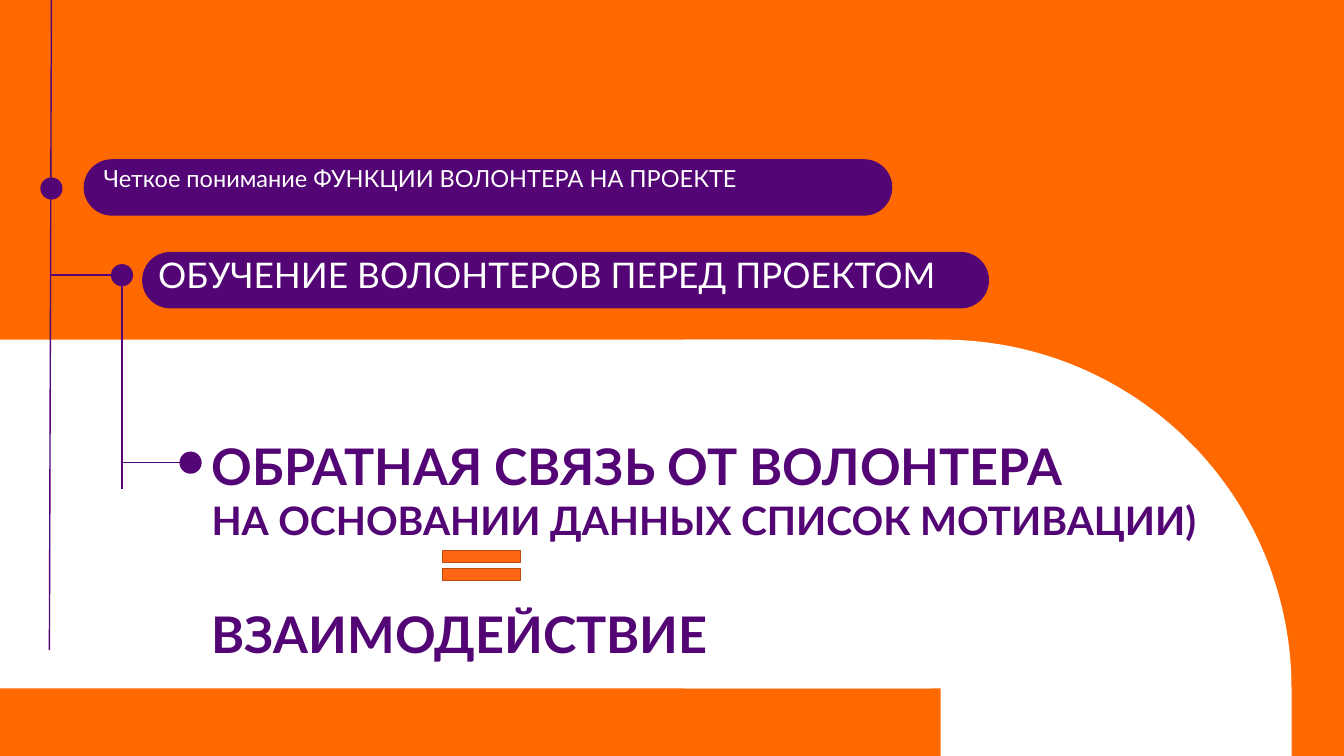
from dataclasses import dataclass
from math import cos, pi, sin

from lxml.etree import SubElement
from pptx import Presentation
from pptx.dml.color import RGBColor
from pptx.enum.shapes import MSO_CONNECTOR, MSO_SHAPE as Preset
from pptx.oxml.ns import qn
from pptx.util import Inches, Pt

ORANGE, PURPLE, WHITE = "FF6900", "540575", "FFFFFF"
EQUAL_FILL, EQUAL_LINE = "FF6614", "BD4B0F"
DOT_SIZE = 0.22


@dataclass
class Block:
    preset: Preset
    left: float
    top: float
    width: float
    height: float
    fill: str
    rounding: float | None = None
    outline: str | None = None


@dataclass
class Line:
    text: str
    size: float
    color: str
    bold: bool = False
    spacing: float = 1.0
    space_before: float = 0


@dataclass
class TextBox:
    left: float
    top: float
    width: float
    height: float
    lines: list[Line]


@dataclass
class Link:
    x1: float
    y1: float
    x2: float
    y2: float


def color(value: str) -> RGBColor:
    return RGBColor.from_string(value)


def paint(shape, fill: str, outline: str | None = None) -> None:
    shape.shadow.inherit = False
    shape.fill.solid()
    shape.fill.fore_color.rgb = color(fill)
    if outline:
        shape.line.color.rgb = color(outline)
        shape.line.width = Pt(1)
    else:
        shape.line.fill.background()


def draw_block(slide, block: Block) -> None:
    shape = slide.shapes.add_shape(
        block.preset, Inches(block.left), Inches(block.top),
        Inches(block.width), Inches(block.height))
    if block.rounding is not None:
        shape.adjustments[0] = block.rounding
    paint(shape, block.fill, block.outline)


def draw_curved_panel(slide) -> None:
    left, right, top, base, bottom = 6.78, 12.81, 3.37, 6.83, 7.5
    radius = base - top
    center_x = right - radius
    steps = 90
    angles = [pi / 2 * step / steps for step in range(steps + 1)]
    arc = [(center_x + radius * cos(a), base - radius * sin(a)) for a in angles]
    points = [(left, base), (9.33, base), (9.33, bottom), (right, bottom), *arc]
    builder = slide.shapes.build_freeform(Inches(left), Inches(top))
    builder.add_line_segments([(Inches(x), Inches(y)) for x, y in points], close=True)
    paint(builder.convert_to_shape(), WHITE)


def draw_text(slide, box: TextBox) -> None:
    shape = slide.shapes.add_textbox(
        Inches(box.left), Inches(box.top), Inches(box.width), Inches(box.height))
    frame = shape.text_frame
    frame.word_wrap = True
    for index, line in enumerate(box.lines):
        paragraph = frame.add_paragraph() if index else frame.paragraphs[0]
        paragraph.line_spacing = line.spacing
        paragraph.space_before = Pt(line.space_before)
        run = paragraph.add_run()
        run.text = line.text
        run.font.name = "Lato"
        run.font.size = Pt(line.size)
        run.font.bold = line.bold
        run.font.color.rgb = color(line.color)


def draw_link(slide, link: Link) -> None:
    connector = slide.shapes.add_connector(
        MSO_CONNECTOR.STRAIGHT, Inches(link.x1), Inches(link.y1),
        Inches(link.x2), Inches(link.y2))
    connector.line.color.rgb = color(PURPLE)
    connector.line.width = Pt(1)
    SubElement(connector._element.spPr, qn("a:effectLst"))


PANELS = [
    Block(Preset.RECTANGLE, 0, 3.37, 9.24, 3.46, WHITE),
    Block(Preset.ROUNDED_RECTANGLE, 1.41, 2.5, 8.4, 0.56, PURPLE, 0.5),
    Block(Preset.ROUNDED_RECTANGLE, 0.83, 1.58, 8.02, 0.56, PURPLE, 0.5),
]
TEXTS = [
    TextBox(1.47, 2.58, 8.69, 0.45, [
        Line("ОБУЧЕНИЕ ВОЛОНТЕРОВ ПЕРЕД ПРОЕКТОМ", 25.2, WHITE, spacing=0.7)]),
    TextBox(0.93, 1.65, 7.64, 0.46, [
        Line("Четкое понимание ФУНКЦИИ ВОЛОНТЕРА НА ПРОЕКТЕ", 16.8, WHITE, spacing=0.7)]),
    TextBox(2, 4.27, 10.11, 2.39, [
        Line("ОБРАТНАЯ СВЯЗЬ ОТ ВОЛОНТЕРА", 36, PURPLE, True),
        Line("НА ОСНОВАНИИ ДАННЫХ СПИСОК МОТИВАЦИИ)", 28, PURPLE, True),
        Line("ВЗАИМОДЕЙСТВИЕ", 36, PURPLE, True, space_before=43)]),
]
LINKS = [
    Link(0.51, 0, 0.49, 6.45),
    Link(0.51, 2.73, 1.21, 2.73),
    Link(1.21, 2.73, 1.21, 4.85),
    Link(1.21, 4.59, 1.92, 4.59),
]
DOT_CENTERS = [(0.51, 1.87), (1.21, 2.73), (1.89, 4.59)]


def main() -> None:
    presentation = Presentation()
    presentation.slide_width = Inches(13.33)
    presentation.slide_height = Inches(7.5)
    slide = presentation.slides.add_slide(presentation.slide_layouts[6])

    # Background and panels
    draw_block(slide, Block(Preset.RECTANGLE, 0, 0, 13.33, 7.5, ORANGE))
    draw_curved_panel(slide)
    for panel in PANELS:
        draw_block(slide, panel)

    # Wording
    for box in TEXTS:
        draw_text(slide, box)

    # Tree of links and dots
    for link in LINKS:
        draw_link(slide, link)
    for x, y in DOT_CENTERS:
        draw_block(slide, Block(Preset.OVAL, x - DOT_SIZE / 2, y - DOT_SIZE / 2,
                                DOT_SIZE, DOT_SIZE, PURPLE))

    # Equals sign
    draw_block(slide, Block(Preset.MATH_EQUAL, 4.25, 5.36, 1.05, 0.5,
                            EQUAL_FILL, outline=EQUAL_LINE))

    presentation.save("out.pptx")


if __name__ == "__main__":
    main()
